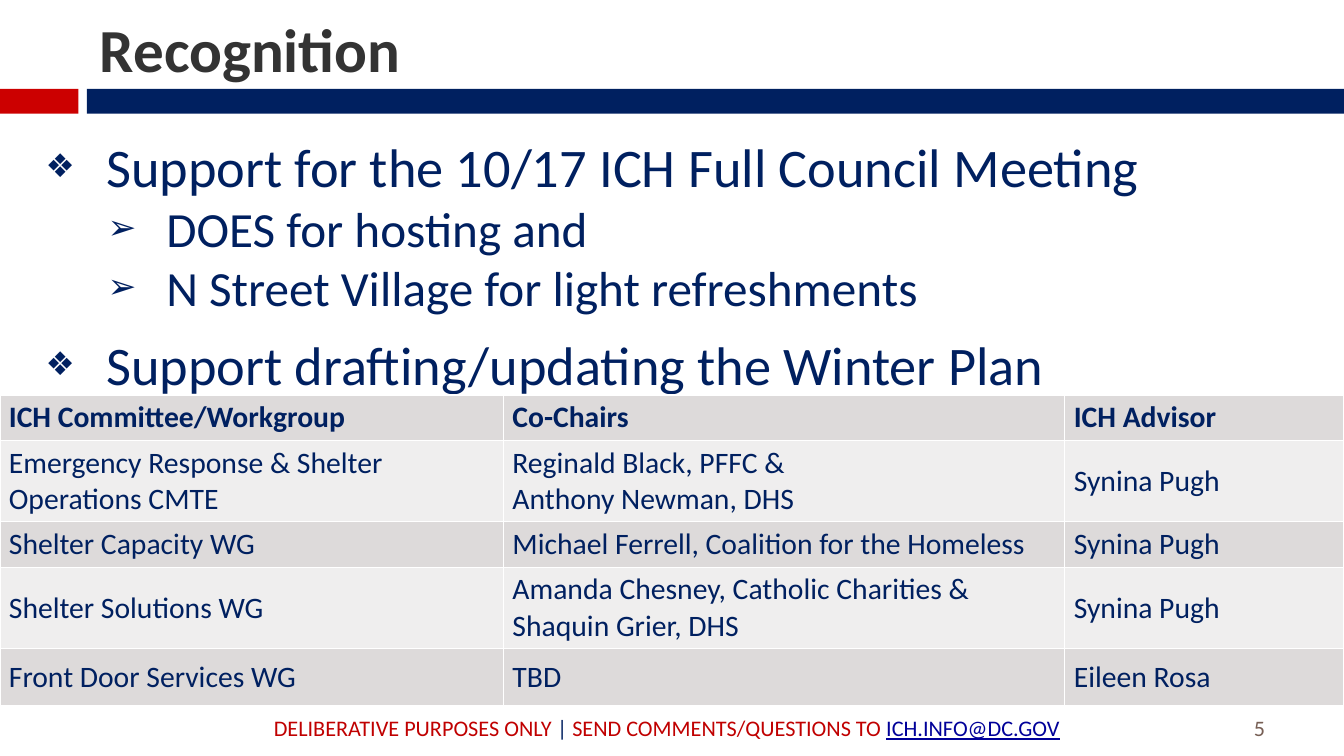
from lxml.etree import SubElement
from pptx import Presentation
from pptx.dml.color import RGBColor
from pptx.enum.shapes import MSO_SHAPE
from pptx.enum.text import MSO_ANCHOR as ANCHOR, MSO_AUTO_SIZE as AUTO, PP_ALIGN as ALIGN
from pptx.oxml.ns import qn
from pptx.util import Cm, Pt

RED = RGBColor(0xCC, 0x00, 0x00)
NAVY = RGBColor(0x00, 0x20, 0x60)
NOTICE_RED = RGBColor(0xC0, 0x00, 0x00)
LINK_BLUE = RGBColor(0x00, 0x00, 0x99)
CHARCOAL = RGBColor(0x33, 0x33, 0x33)
BROWN = RGBColor(0x77, 0x5F, 0x55)
DARK_BAND = RGBColor(0xDD, 0xDA, 0xDA)
LIGHT_BAND = RGBColor(0xEF, 0xEE, 0xEE)
WHITE = RGBColor(0xFF, 0xFF, 0xFF)

FONT = "Calibri"
LEVELS = [
    {"size": 44, "indent": 1.73, "hang": 1.73, "bullet": "❖", "percent": 60},
    {"size": 39.8, "indent": 3.45, "hang": 1.68, "bullet": "➢", "percent": 70},
]
SUPPORT = [
    (0, "Support for the 10/17 ICH Full Council Meeting", 0),
    (1, "DOES for hosting and", 0),
    (1, "N Street Village for light refreshments", 0),
    (0, "Support drafting/updating the Winter Plan", 12),
]
COLUMNS = [14.38, 16.03, 7.97]
ROW_HEIGHTS = [1.3, 2.32, 1.3, 2.32, 1.63]
COMMITTEES = [
    ("ICH Committee/Workgroup", "Co-Chairs", "ICH Advisor"),
    ("Emergency Response & Shelter Operations CMTE",
     "Reginald Black, PFFC &\nAnthony Newman, DHS", "Synina Pugh"),
    ("Shelter Capacity WG", "Michael Ferrell, Coalition for the Homeless", "Synina Pugh"),
    ("Shelter Solutions WG",
     "Amanda Chesney, Catholic Charities &\nShaquin Grier, DHS", "Synina Pugh"),
    ("Front Door Services WG", "TBD", "Eileen Rosa"),
]
NOTICE = [
    ("DELIBERATIVE PURPOSES ONLY ", NOTICE_RED, False),
    ("| ", NAVY, False),
    ("SEND COMMENTS/QUESTIONS TO ", NOTICE_RED, False),
    ("ICH.INFO@DC.GOV", LINK_BLUE, True),
]


def format_run(r, size, color, bold=False, underline=False):
    f = r.font
    f.name, f.size, f.bold, f.underline = FONT, Pt(size), bold, underline
    f.color.rgb = color


def place(sp, left, top, width, height):
    sp.left, sp.top, sp.width, sp.height = Cm(left), Cm(top), Cm(width), Cm(height)


def set_frame(tf, anchor):
    tf.word_wrap = True
    tf.auto_size = AUTO.NONE
    tf.vertical_anchor = anchor
    tf.margin_left = tf.margin_right = Cm(0.28)
    tf.margin_top = tf.margin_bottom = Cm(0.15)


def add_bar(slide, left, width, color):
    sp = slide.shapes.add_shape(MSO_SHAPE.RECTANGLE, Cm(left), Cm(2.54), Cm(width), Cm(0.71))
    sp.shadow.inherit = False
    sp.fill.solid()
    sp.fill.fore_color.rgb = color
    sp.line.fill.background()


def set_title(slide, text):
    sp = slide.shapes.title
    place(sp, 2.57, 0.25, 31.22, 2.31)
    tf = sp.text_frame
    set_frame(tf, ANCHOR.BOTTOM)
    tf.text = text
    p = tf.paragraphs[0]
    p.alignment = ALIGN.LEFT
    format_run(p.runs[0], 49.5, CHARCOAL, bold=True)


def set_bullet(p, level):
    pPr = p._p.get_or_add_pPr()
    pPr.set("marL", str(Cm(level["indent"])))
    pPr.set("indent", str(-Cm(level["hang"])))
    SubElement(pPr, qn("a:buSzPct"), val=str(level["percent"] * 1000))
    SubElement(pPr, qn("a:buChar"), char=level["bullet"])


def set_list(slide, items):
    sp = slide.placeholders[1]
    place(sp, 1.02, 3.66, 36.42, 7.14)
    tf = sp.text_frame
    set_frame(tf, ANCHOR.TOP)
    tf.text = "\n".join(text for _, text, _ in items)
    for p, (depth, _, before) in zip(tf.paragraphs, items):
        level = LEVELS[depth]
        p.level = depth
        set_bullet(p, level)
        p.alignment = ALIGN.LEFT
        p.space_before = Pt(before)
        format_run(p.runs[0], level["size"], NAVY)


def set_borders(cell):
    tcPr = cell._tc.get_or_add_tcPr()
    for i, side in enumerate(("a:lnL", "a:lnR", "a:lnT", "a:lnB")):
        ln = tcPr.makeelement(qn(side), {"w": str(Pt(1))})
        SubElement(SubElement(ln, qn("a:solidFill")), qn("a:srgbClr"), val=str(WHITE))
        tcPr.insert(i, ln)


def fill_cell(cell, text, header, color):
    cell.fill.solid()
    cell.fill.fore_color.rgb = color
    set_borders(cell)
    cell.vertical_anchor = ANCHOR.TOP if header else ANCHOR.MIDDLE
    cell.text_frame.text = text
    for p in cell.text_frame.paragraphs:
        format_run(p.runs[0], 24, NAVY, bold=header)


def add_committees(slide):
    table = slide.shapes.add_table(
        len(COMMITTEES), len(COLUMNS), Cm(0), Cm(11.28),
        Cm(sum(COLUMNS)), Cm(sum(ROW_HEIGHTS))).table
    for column, width in zip(table.columns, COLUMNS):
        column.width = Cm(width)
    for i, (row, height) in enumerate(zip(table.rows, ROW_HEIGHTS)):
        row.height = Cm(height)
        for cell, text in zip(row.cells, COMMITTEES[i]):
            fill_cell(cell, text, i == 0, LIGHT_BAND if i % 2 else DARK_BAND)


def add_text(slide, left, top, width, height, anchor, size, pieces):
    sp = slide.shapes.add_textbox(Cm(left), Cm(top), Cm(width), Cm(height))
    set_frame(sp.text_frame, anchor)
    p = sp.text_frame.paragraphs[0]
    for text, color, underline in pieces:
        r = p.add_run()
        r.text = text
        format_run(r, size, color, underline=underline)


def main():
    prs = Presentation()
    prs.slide_width, prs.slide_height = Cm(38.38), Cm(21.59)
    slide = prs.slides.add_slide(prs.slide_layouts[1])
    add_bar(slide, 0, 2.24, RED)
    add_bar(slide, 2.48, 35.9, NAVY)
    set_title(slide, "Recognition")
    set_list(slide, SUPPORT)
    add_text(slide, 7.54, 20.27, 23.93, 1.02, ANCHOR.MIDDLE, 18, NOTICE)
    add_text(slide, 35.53, 20.17, 1.91, 1.14, ANCHOR.BOTTOM, 17.9, [("5", BROWN, False)])
    add_committees(slide)
    prs.save("out.pptx")


if __name__ == "__main__":
    main()
